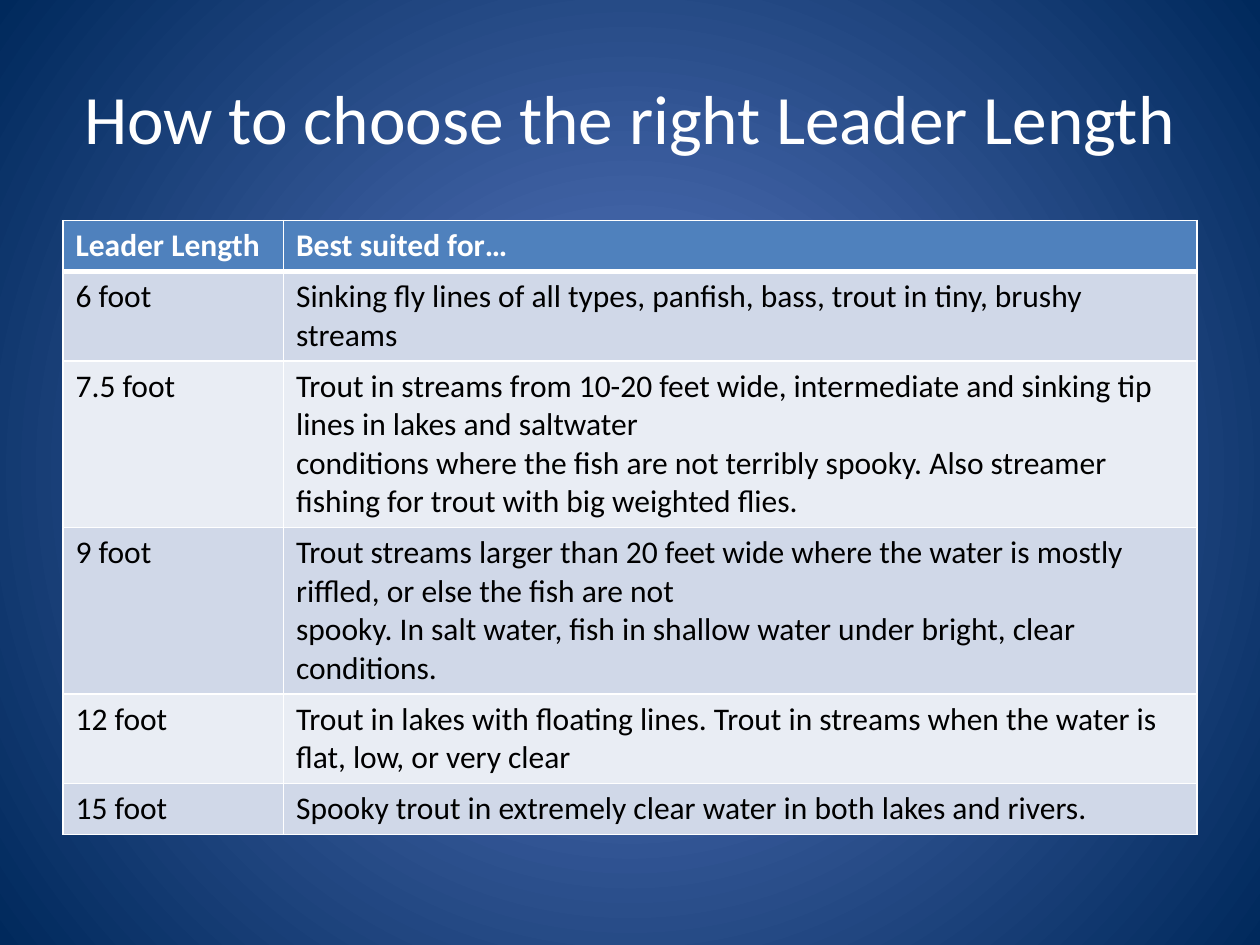
from lxml.etree import SubElement
from pptx import Presentation
from pptx.dml.color import RGBColor
from pptx.enum.text import MSO_ANCHOR, MSO_AUTO_SIZE, PP_ALIGN
from pptx.oxml import parse_xml
from pptx.oxml.ns import nsdecls, qn
from pptx.util import Inches, Pt

LEADERS = [
    ("Leader Length", ["Best suited for…"]),
    ("6 foot", ["Sinking fly lines of all types, panfish, bass, trout in tiny, brushy streams"]),
    ("7.5 foot", [
        "Trout in streams from 10-20 feet wide, intermediate and sinking tip lines in lakes and saltwater",
        "conditions where the fish are not terribly spooky. Also streamer fishing for trout with big weighted flies.",
    ]),
    ("9 foot", [
        "Trout streams larger than 20 feet wide where the water is mostly riffled, or else the fish are not",
        "spooky. In salt water, fish in shallow water under bright, clear conditions.",
    ]),
    ("12 foot", ["Trout in lakes with floating lines. Trout in streams when the water is flat, low, or very clear"]),
    ("15 foot", ["Spooky trout in extremely clear water in both lakes and rivers."]),
]


def color(hex_code):
    return RGBColor.from_string(hex_code)


def unit(count):
    """Length of a number of quarter-inch grid units."""
    return Inches(count * 0.25)


class LeaderSlide:
    WHITE, BLACK, HEADER = "FFFFFF", "000000", "4F81BD"
    BANDS = ("E9EDF4", "D0D8E8")
    GLOW, EDGE = "5E7CC5", "00295C"
    TITLE = {"name": "Calibri", "size": Pt(39.6), "bold": False}
    HEAD = {"name": "Calibri", "size": Pt(18), "bold": True}
    BODY = {**HEAD, "bold": False}

    def __init__(self, deck):
        self.slide = deck.slides.add_slide(deck.slide_layouts[5])

    def background(self):
        fill = self.slide.background.fill
        fill.gradient()
        for stop, shade in zip(fill.gradient_stops, (self.GLOW, self.EDGE)):
            stop.color.rgb = color(shade)
        linear = self.slide.background._cSld.find(".//" + qn("a:lin"))
        linear.getparent().replace(linear, parse_xml(
            f'<a:path {nsdecls("a")} path="circle">'
            '<a:fillToRect l="50000" t="50000" r="50000" b="50000"/></a:path>'))

    def set_text(self, frame, lines, style, shade):
        frame.text = "\n".join(lines)
        for paragraph in frame.paragraphs:
            for run in paragraph.runs:
                for key, value in style.items():
                    setattr(run.font, key, value)
                run.font.color.rgb = color(shade)

    def title(self, text, left, top, width, height):
        heading = self.slide.shapes.title
        box = {"left": left, "top": top, "width": width, "height": height}
        for key, value in box.items():
            setattr(heading, key, unit(value))
        frame = heading.text_frame
        self.set_text(frame, [text], self.TITLE, self.WHITE)
        frame.auto_size = MSO_AUTO_SIZE.NONE
        frame.vertical_anchor = MSO_ANCHOR.MIDDLE
        frame.paragraphs[0].alignment = PP_ALIGN.CENTER

    def borders(self, cell, widths):
        properties = cell._tc.get_or_add_tcPr()
        for position, (side, points) in enumerate(widths.items()):
            line = SubElement(properties, qn(f"a:ln{side}"), w=str(Pt(points)))
            fill = SubElement(line, qn("a:solidFill"))
            SubElement(fill, qn("a:srgbClr"), val=self.WHITE)
            properties.insert(position, line)

    def table(self, entries, left, top, column_widths, row_height):
        leaders = self.slide.shapes.add_table(
            len(entries), len(column_widths), unit(left), unit(top),
            unit(sum(column_widths)), unit(row_height * len(entries))).table
        for column, width in zip(leaders.columns, column_widths):
            column.width = unit(width)
        for index, (length, uses) in enumerate(entries):
            header = index == 0
            for cell, lines in zip(leaders.rows[index].cells, ([length], uses)):
                self.set_text(cell.text_frame, lines,
                              self.HEAD if header else self.BODY,
                              self.WHITE if header else self.BLACK)
                cell.fill.solid()
                cell.fill.fore_color.rgb = color(self.HEADER if header else self.BANDS[index % 2])
                # The rule under the header is shared with the first data row
                self.borders(cell, {"L": 1, "R": 1, "T": 3 if index == 1 else 1,
                                    "B": 3 if header else 1})


def main():
    deck = Presentation()
    deck.slide_width, deck.slide_height = unit(40), unit(30)
    page = LeaderSlide(deck)
    page.background()
    # Heading
    page.title("How to choose the right Leader Length", 2, 1.2, 36, 5)
    # Leader lengths and their uses; rows grow with their text
    page.table(LEADERS, 2, 7, (7, 29), 1.62)
    deck.save("out.pptx")


if __name__ == "__main__":
    main()
